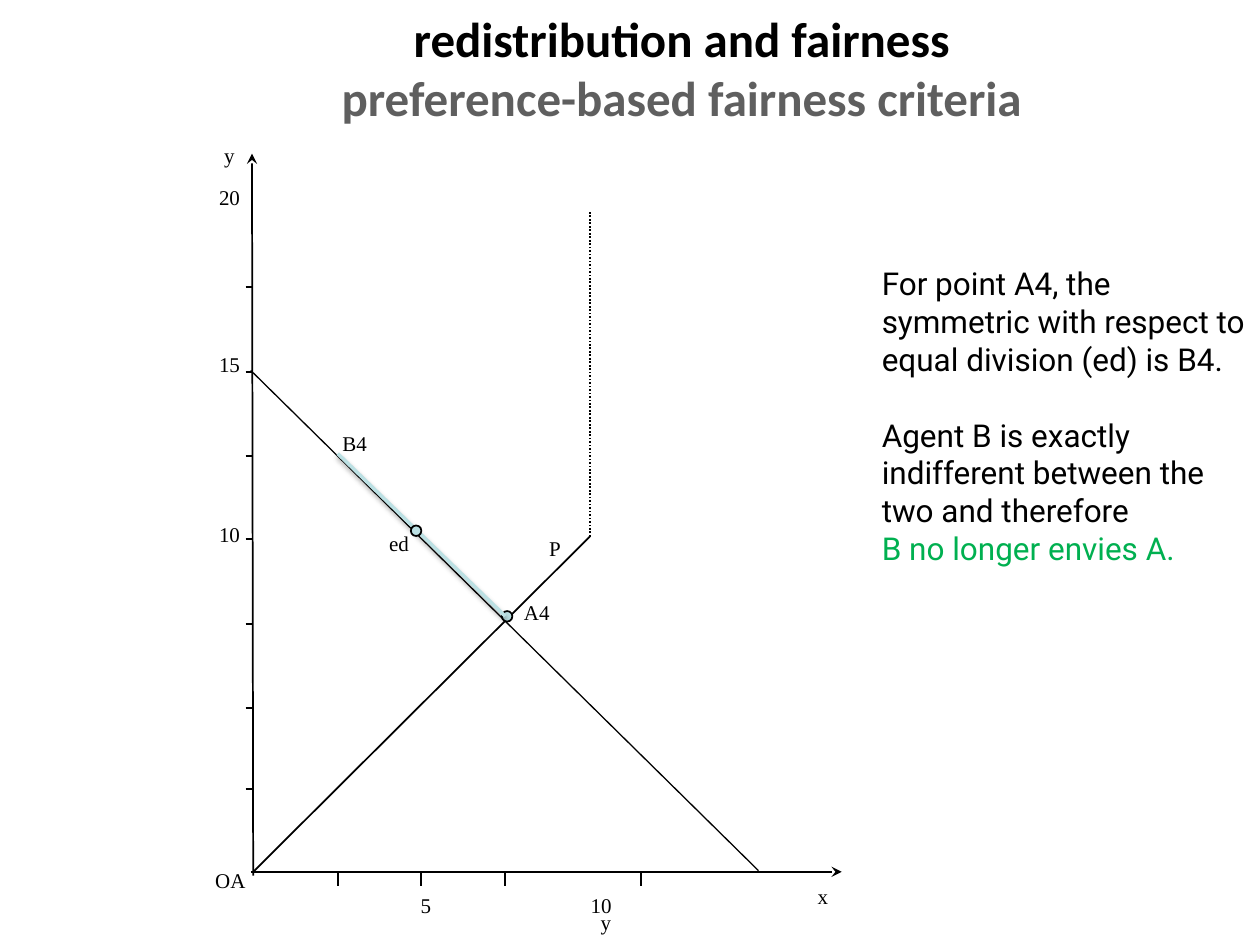
import pptx
import pptx.dml.color
import pptx.enum.dml
import pptx.enum.shapes
import pptx.enum.text
import pptx.oxml.ns
import pptx.util
from lxml import etree

Pt = pptx.util.Pt
COLORS = {"ink": "000000", "subtitle": "5F5F5F", "accent": "BBE0E3", "conclusion": "00B050"}
LABEL_HEIGHT = 21.6


def color(name):
    return pptx.dml.color.RGBColor.from_string(COLORS[name])


def add_xml(parent, tag, **attributes):
    return etree.SubElement(parent, pptx.oxml.ns.qn(tag), attributes)


class SlideBuilder:
    title_font = "Calibri"
    body_font = "Roboto"
    label_font = "Times New Roman"

    def __init__(self, slide):
        self.slide = slide

    def format_run(self, run, font, size, color_name="ink", bold=False):
        run.font.name = font
        run.font.size = Pt(size)
        run.font.bold = bold
        run.font.color.rgb = color(color_name)

    def title(self, heading, subheading, left, top, width, height):
        title = self.slide.shapes.title
        title.left, title.top, title.width, title.height = map(Pt, (left, top, width, height))
        frame = title.text_frame
        frame.text = f"{heading}\v{subheading}"
        frame.vertical_anchor = pptx.enum.text.MSO_ANCHOR.MIDDLE
        paragraph = frame.paragraphs[0]
        paragraph.alignment = pptx.enum.text.PP_ALIGN.CENTER
        paragraph.line_spacing = 1
        for run, name in zip(paragraph.runs, ("ink", "subtitle")):
            self.format_run(run, self.title_font, 28, name, bold=True)

    def text_box(self, text, left, top, width, height, wrap):
        box = self.slide.shapes.add_textbox(Pt(left), Pt(top), Pt(width), Pt(height))
        frame = box.text_frame
        frame.text = text
        frame.word_wrap = wrap
        frame.auto_size = pptx.enum.text.MSO_AUTO_SIZE.SHAPE_TO_FIT_TEXT
        return frame

    def label(self, text, left, top, width, wrap=False):
        frame = self.text_box(text, left, top, width, LABEL_HEIGHT, wrap)
        self.format_run(frame.paragraphs[0].runs[0], self.label_font, 12)

    def explanation(self, paragraphs, left, top, width, height):
        """Add paragraphs given as (text, color name, space before)."""
        text = "\n".join(paragraph[0] for paragraph in paragraphs)
        frame = self.text_box(text, left, top, width, height, True)
        for paragraph, (_, name, gap) in zip(frame.paragraphs, paragraphs):
            if gap:
                paragraph.space_before = Pt(gap)
            self.format_run(paragraph.runs[0], self.body_font, 18, name)

    def line(self, x1, y1, x2, y2, width=1, name="ink", dotted=False, arrow=False, shadow=False):
        connector = self.slide.shapes.add_connector(
            pptx.enum.shapes.MSO_CONNECTOR.STRAIGHT, Pt(x1), Pt(y1), Pt(x2), Pt(y2))
        connector.line.width = Pt(width)
        connector.line.color.rgb = color(name)
        if dotted:
            connector.line.dash_style = pptx.enum.dml.MSO_LINE.ROUND_DOT
        properties = connector._element.spPr
        if arrow:
            add_xml(properties.find(pptx.oxml.ns.qn("a:ln")), "a:tailEnd", type="stealth")
        effects = add_xml(properties, "a:effectLst")
        if shadow:
            outer = add_xml(effects, "a:outerShdw", blurRad=str(Pt(3.1)), dist=str(Pt(1.6)),
                            dir="5400000", rotWithShape="0")
            shade = add_xml(outer, "a:srgbClr", val=COLORS["ink"])
            add_xml(shade, "a:alpha", val="38000")

    def point(self, left, top, size=6):
        dot = self.slide.shapes.add_shape(
            pptx.enum.shapes.MSO_SHAPE.FLOWCHART_CONNECTOR, Pt(left), Pt(top), Pt(size), Pt(size))
        dot.shadow.inherit = False
        dot.fill.solid()
        dot.fill.fore_color.rgb = color("accent")
        dot.line.color.rgb = color("ink")
        dot.line.width = Pt(1)


def main():
    presentation = pptx.Presentation()
    presentation.slide_width, presentation.slide_height = Pt(720), Pt(540)
    builder = SlideBuilder(presentation.slides.add_slide(presentation.slide_layouts[5]))

    builder.title("redistribution and fairness", "preference-based fairness criteria",
                  65.5, -6.5, 648, 90)
    builder.explanation([
        ("For point A4, the symmetric with respect to equal division (ed) is B4.", "ink", 0),
        ("Agent B is exactly indifferent between the two and therefore", "ink", 21.6),
        ("B no longer envies A.", "conclusion", 0),
    ], 496.8, 147.6, 223.2, 203.8)

    # Axes with their ticks and values
    builder.line(143.3, 498.2, 481, 498.2, arrow=True)
    builder.line(144.7, 500.4, 144, 87.8, arrow=True)
    for y in (164.2, 212.4, 260.6, 308.2, 356.4, 404.6, 450.7):
        builder.line(140.4, y, 144.7, y)
    for x in (193, 240.7, 288.7, 366.5):
        builder.line(x, 506.2, x, 498.2)
    for value, top in (("10", 294.5), ("15", 197.3), ("20", 102.2)):
        builder.label(value, 118.1, top, 26.6)
    for value, left in (("5", 233.3), ("10", 330.5)):
        builder.label(value, left, 506.2, 31.7, wrap=True)

    # Frontier, equal-share ray and vertical bound
    builder.line(337, 306.7, 337, 120.2, dotted=True)
    builder.line(433.4, 497.5, 143.3, 211.7, width=0.75)
    builder.line(144.7, 498.2, 337, 306.7)

    # Envy-free segment between A4 and B4
    builder.point(286.8, 349.2)
    builder.line(193, 259.2, 288.7, 352.1, width=2, name="accent", shadow=True)
    builder.point(234.8, 300.3)

    for text, left, top, width in (
        ("P", 306.7, 302.4, 20.9),
        ("y", 121, 77.8, 20.2),
        ("x", 460.1, 501.1, 20.2),
        ("y", 336.2, 516.2, 20.2),
        ("OA", 115.9, 492.5, 31.7),
        ("A4", 292.3, 339.1, 29.5),
        ("B4", 188.6, 242.6, 29.5),
        ("ed", 215.3, 299.5, 25.9),
    ):
        builder.label(text, left, top, width)

    presentation.save("out.pptx")


if __name__ == "__main__":
    main()
